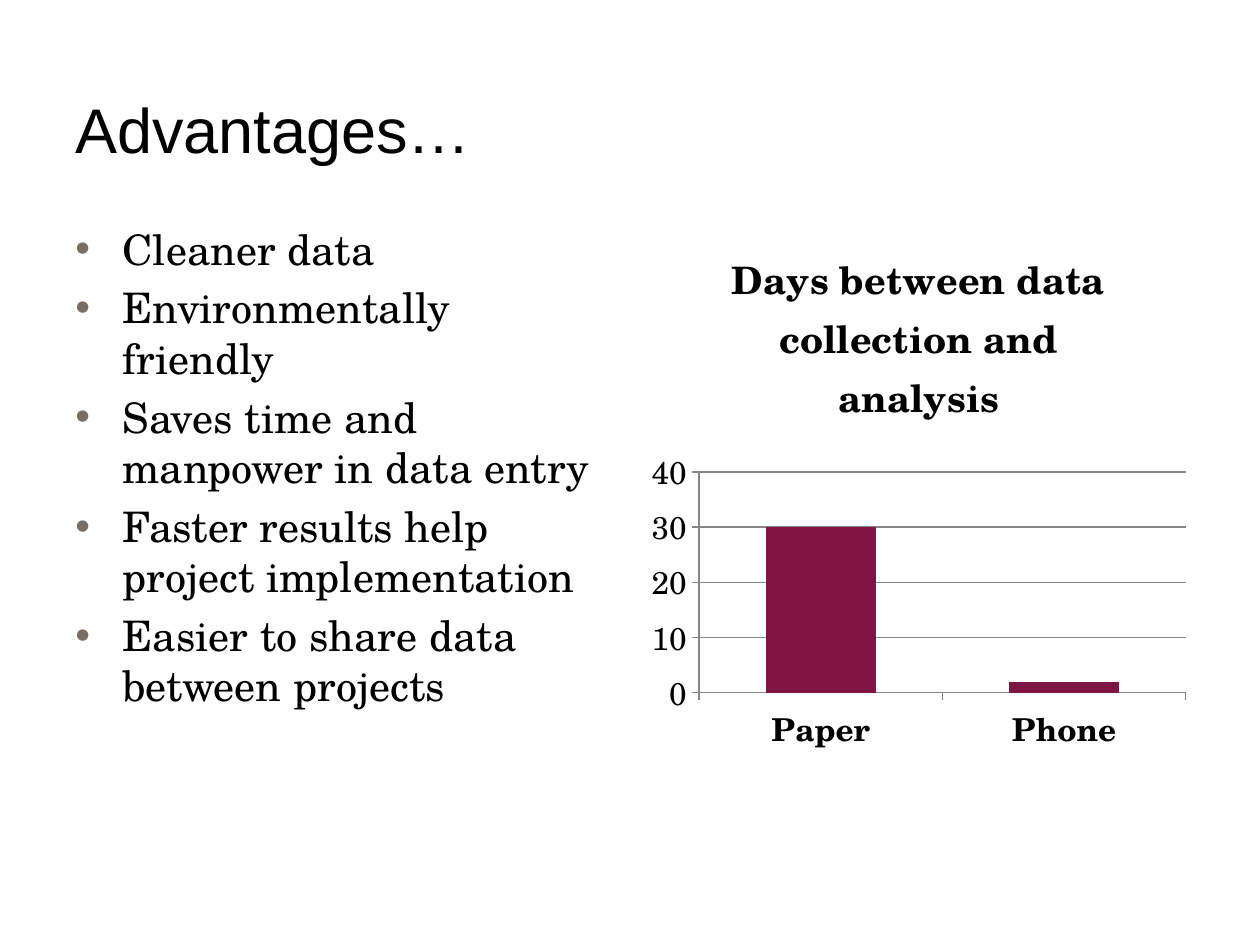
from dataclasses import dataclass

from lxml.etree import SubElement
from pptx import Presentation
from pptx.chart.data import CategoryChartData as ChartData
from pptx.dml.color import RGBColor as RGB
from pptx.enum.chart import XL_CHART_TYPE as ChartType, XL_TICK_MARK as Tick
from pptx.enum.text import MSO_ANCHOR as Anchor
from pptx.oxml.ns import qn
from pptx.util import Pt


@dataclass(frozen=True)
class Theme:
    ink: str = "000000"
    bullet: str = "776F65"
    bar: str = "7F1542"
    rule: str = "868686"
    heading_font: str = "Arial"
    body_font: str = "TeX Gyre Schola"
    heading_size: float = 36
    body_size: float = 24
    chart_title_size: float = 21.6
    axis_size: float = 18


class SlideBuilder:
    def __init__(self, slide, theme):
        self.slide = slide
        self.theme = theme

    def style(self, font, name, size, bold=False):
        font.name = name
        font.size = Pt(size)
        font.bold = bold
        font.color.rgb = RGB.from_string(self.theme.ink)

    def frame(self, box, anchor):
        area = self.slide.shapes.add_textbox(*map(Pt, box)).text_frame
        area.word_wrap = True
        area.vertical_anchor = anchor
        return area

    def heading(self, text, box):
        run = self.frame(box, Anchor.MIDDLE).paragraphs[0].add_run()
        run.text = text
        self.style(run.font, self.theme.heading_font, self.theme.heading_size)

    def bullets(self, points, box, indent=27):
        area = self.frame(box, Anchor.TOP)
        for index, point in enumerate(points):
            paragraph = area.add_paragraph() if index else area.paragraphs[0]
            if index:
                paragraph.space_before = Pt(0.2 * self.theme.body_size)
            props = paragraph._p.get_or_add_pPr()
            props.set("marL", str(Pt(indent)))
            props.set("indent", str(-Pt(indent)))
            colour = SubElement(props, qn("a:buClr"))
            SubElement(colour, qn("a:srgbClr"), val=self.theme.bullet)
            SubElement(props, qn("a:buFont"), typeface=self.theme.heading_font)
            SubElement(props, qn("a:buChar"), char="•")
            run = paragraph.add_run()
            run.text = point
            self.style(run.font, self.theme.body_font, self.theme.body_size)

    def column_chart(self, title, values, box):
        theme = self.theme
        data = ChartData()
        data.categories = list(values)
        data.add_series(title, list(values.values()))
        chart = self.slide.shapes.add_chart(
            ChartType.COLUMN_CLUSTERED, *map(Pt, box), data).chart
        self.style(chart.font, theme.body_font, theme.axis_size)
        chart.has_legend = False

        chart.has_title = True
        chart.chart_title.include_in_layout = False
        title_run = chart.chart_title.text_frame.paragraphs[0].add_run()
        title_run.text = title
        self.style(title_run.font, theme.body_font, theme.chart_title_size, True)

        plot = chart.plots[0]
        plot.gap_width = 122
        plot.vary_by_categories = False
        fill = plot.series[0].format.fill
        fill.solid()
        fill.fore_color.rgb = RGB.from_string(theme.bar)

        scale = chart.value_axis
        scale.minimum_scale, scale.maximum_scale, scale.major_unit = 0, 40, 10
        scale.has_major_gridlines = True
        for axis, bold in ((chart.category_axis, True), (scale, False)):
            axis.major_tick_mark = Tick.OUTSIDE
            axis.minor_tick_mark = Tick.NONE
            self.style(axis.tick_labels.font, theme.body_font, theme.axis_size, bold)
        for part in (chart.category_axis, scale, scale.major_gridlines):
            part.format.line.color.rgb = RGB.from_string(theme.rule)
            part.format.line.width = Pt(0.75)


def main():
    deck = Presentation()
    deck.slide_width, deck.slide_height = Pt(720), Pt(540)
    builder = SlideBuilder(deck.slides.add_slide(deck.slide_layouts[6]), Theme())
    margin, column = 36, 318
    builder.heading("Advantages…", (margin, 42, 648, 62.5))
    builder.bullets(
        ["Cleaner data",
         "Environmentally friendly",
         "Saves time and manpower in data entry",
         "Faster results help project implementation",
         "Easier to share data between projects"],
        (margin, 124, column, 356))
    builder.column_chart(
        "Days between data collection and analysis",
        {"Paper": 30, "Phone": 2},
        (720 - margin - column, 126, column, 311))
    deck.save("out.pptx")


if __name__ == "__main__":
    main()
